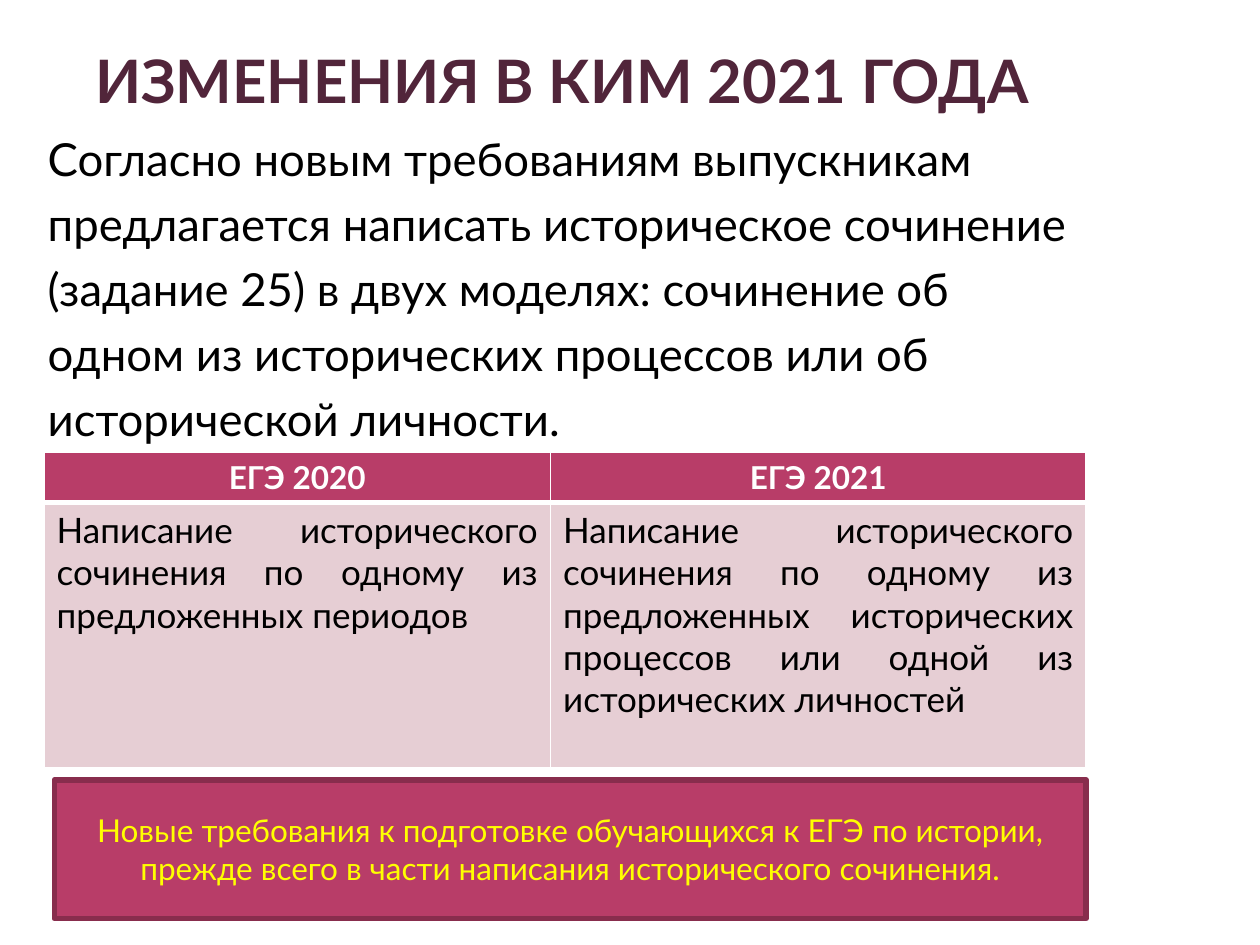
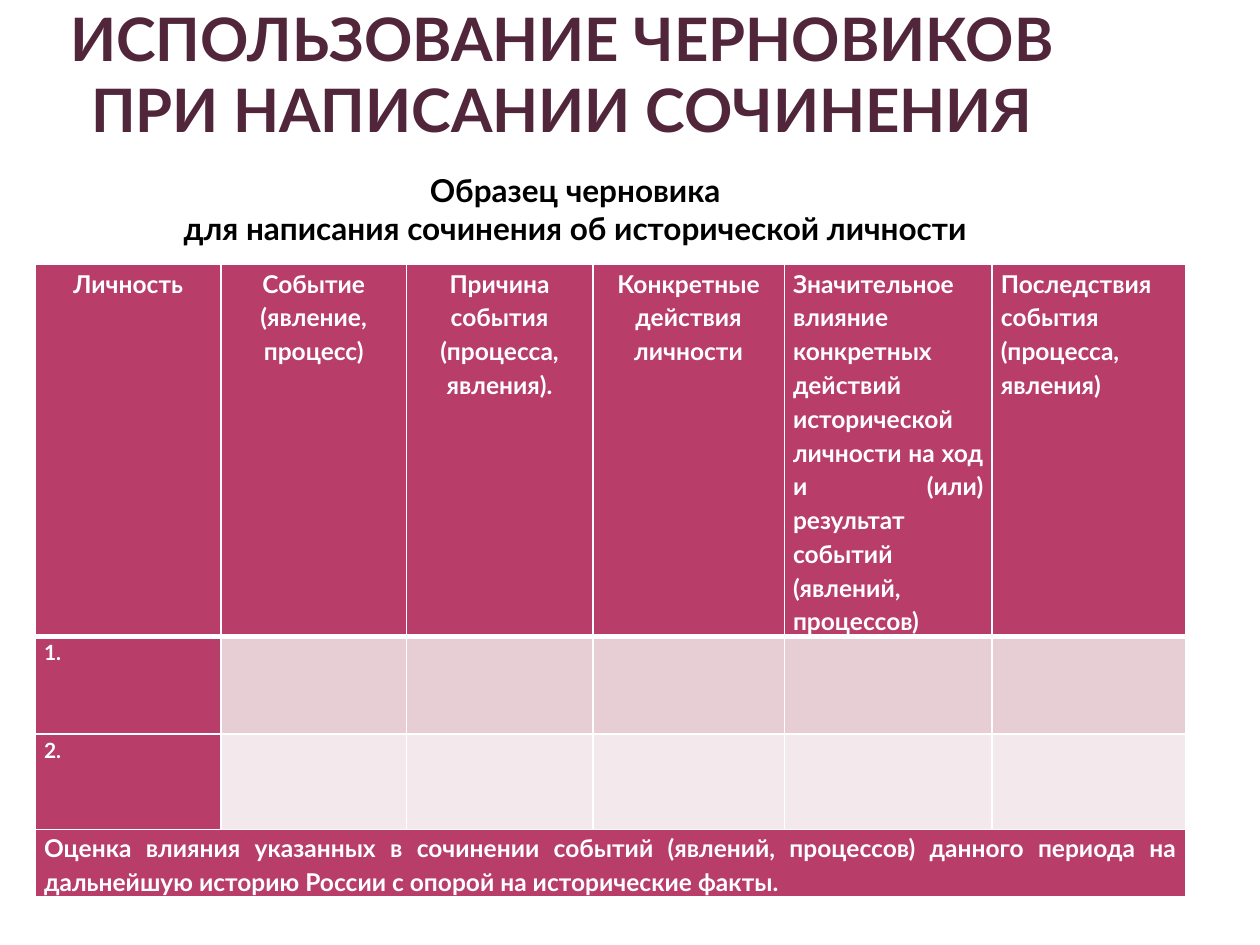
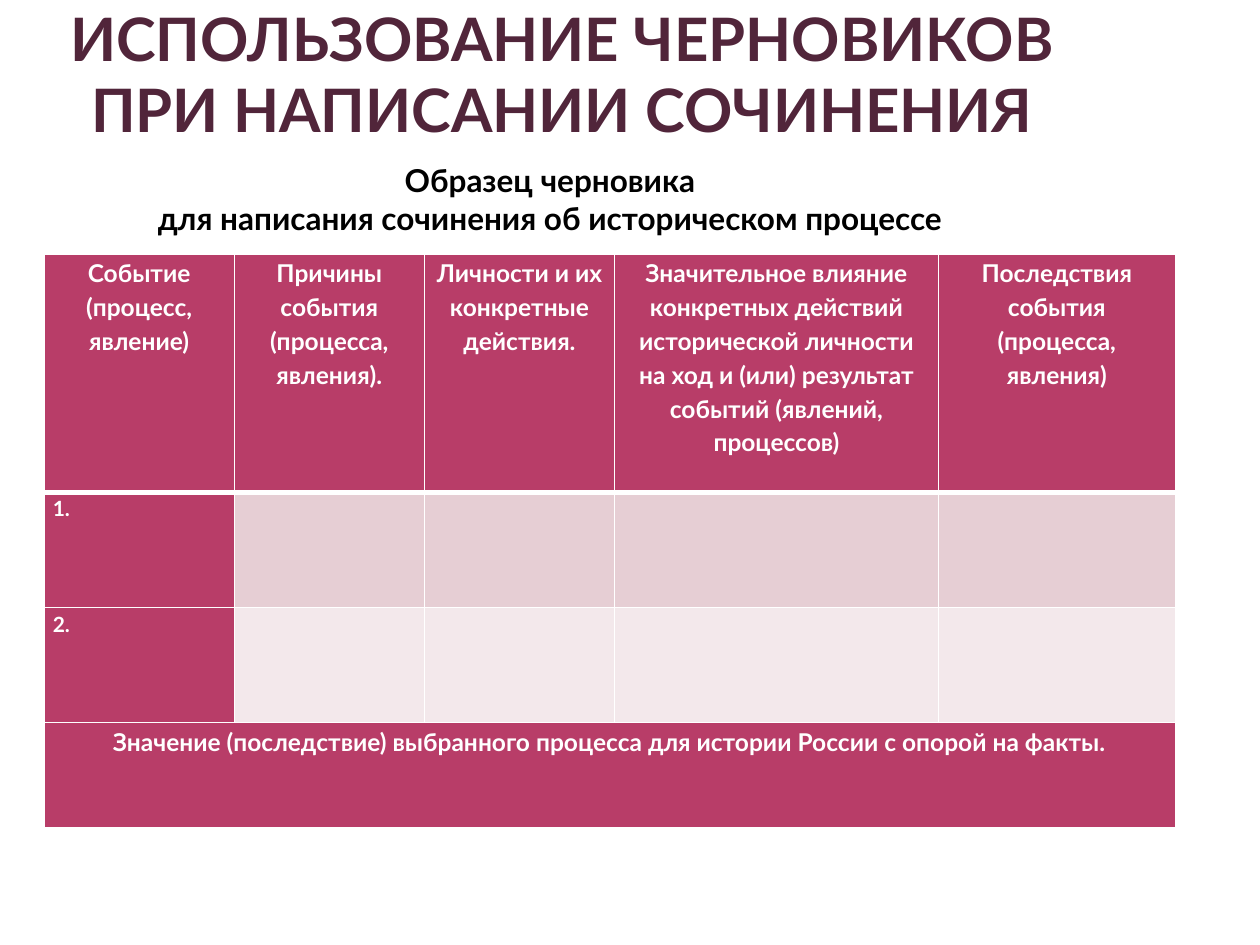
from dataclasses import dataclass
from typing import NamedTuple, Optional

from lxml import etree
from pptx import Presentation
from pptx.dml.color import RGBColor
from pptx.enum.shapes import MSO_SHAPE
from pptx.enum.text import MSO_ANCHOR, MSO_AUTO_SIZE, PP_ALIGN
from pptx.oxml.ns import qn
from pptx.util import Pt

RECTANGLE = MSO_SHAPE.RECTANGLE
MIDDLE, BOTTOM = MSO_ANCHOR.MIDDLE, MSO_ANCHOR.BOTTOM
NO_AUTOFIT = MSO_AUTO_SIZE.NONE
LEFT, CENTER, JUSTIFY = PP_ALIGN.LEFT, PP_ALIGN.CENTER, PP_ALIGN.JUSTIFY

# Shared look
FONT = "Lato"
PLUM, RASPBERRY, DARK_RASPBERRY = "51253A", "B83D68", "882D4D"
ROSE, PALE_ROSE = "E6CED4", "F3E8EB"
WHITE, BLACK, YELLOW = "FFFFFF", "000000", "FFFF00"
TITLE_ONLY = 5
TITLE_SIZE = 34.2
THIN, THICK = 1, 3


class Box(NamedTuple):
    left: float
    top: float
    width: float
    height: float

    def lengths(self) -> list:
        return [Pt(value) for value in self]


class TextStyle(NamedTuple):
    size: float
    color: str
    bold: bool = False
    align: PP_ALIGN = CENTER
    space_before: float = 0
    line_spacing: float = 1.0
    hanging: float = 0


TITLE = TextStyle(TITLE_SIZE, PLUM, bold=True)
TITLE_HIGH = Box(36, 25.2, 570.2, 41)
TITLE_TWO_LINES = Box(36, 9.4, 570.2, 73.4)
BODY = TextStyle(26, BLACK, align=JUSTIFY, space_before=6, hanging=21.6)
SUBTITLE = TextStyle(18, BLACK, bold=True)
CALLOUT = TextStyle(18, YELLOW)
YEAR_HEADER = TextStyle(18, WHITE, bold=True)
YEAR_CELL = TextStyle(20, BLACK, align=JUSTIFY)
DRAFT_HEADER = TextStyle(14, WHITE, bold=True, line_spacing=1.15)
DRAFT_HEADER_WIDE = DRAFT_HEADER._replace(align=JUSTIFY)
DRAFT_NUMBER = DRAFT_HEADER._replace(size=12, align=LEFT)


@dataclass
class DraftSlide:
    subtitle: str
    subtitle_box: Box
    headers: list[str]
    justified_headers: int
    table_left: float
    table_top: float
    column_widths: list[float]
    row_heights: list[float]
    summary: str
    summary_align: PP_ALIGN


DRAFT_TITLE = "ИСПОЛЬЗОВАНИЕ ЧЕРНОВИКОВ ПРИ НАПИСАНИИ СОЧИНЕНИЯ"
INFLUENCE = ("Значительное влияние конкретных действий исторической личности "
             "на ход и (или) результат событий (явлений, процессов)")
CONSEQUENCES = "Последствия события (процесса, явления)"

PERSON_DRAFT = DraftSlide(
    subtitle="Образец черновика\nдля написания сочинения об исторической личности",
    subtitle_box=Box(42.5, 94.3, 572.4, 51.1),
    headers=["Личность", "Событие (явление, процесс)",
             "Причина события (процесса, явления).",
             "Конкретные действия личности", INFLUENCE, CONSEQUENCES],
    justified_headers=2,
    table_left=20.2,
    table_top=151.2,
    column_widths=[106.2, 105.8, 106.6, 109.4, 118.8, 110.8],
    row_heights=[212, 56, 54.4, 38],
    summary="Оценка влияния указанных в сочинении событий (явлений, процессов) "
            "данного периода на дальнейшую историю России с опорой на "
            "исторические факты.",
    summary_align=JUSTIFY,
)
PROCESS_DRAFT = DraftSlide(
    subtitle="Образец черновика\nдля написания сочинения об историческом процессе",
    subtitle_box=Box(25.2, 88.6, 578.2, 51.1),
    headers=["Событие (процесс, явление)",
             "Причины события (процесса, явления).",
             "Личности и их конкретные действия.", INFLUENCE, CONSEQUENCES],
    justified_headers=0,
    table_left=25.2,
    table_top=145.4,
    column_widths=[108.7, 108.7, 108.7, 185, 135.4],
    row_heights=[136, 65.8, 65.8, 59.8],
    summary="Значение (последствие) выбранного процесса для истории России "
            "с опорой на факты.",
    summary_align=CENTER,
)


def rgb(color: str) -> RGBColor:
    return RGBColor.from_string(color)


# Text
def write(text_frame, text: str, style: TextStyle) -> None:
    text_frame.text = text
    text_frame.word_wrap = True
    for index, paragraph in enumerate(text_frame.paragraphs):
        paragraph.alignment = style.align
        paragraph.line_spacing = style.line_spacing
        paragraph.space_before = Pt(style.space_before if index else 0)
        if style.hanging:
            properties = paragraph._p.get_or_add_pPr()
            properties.set("marL", str(Pt(style.hanging)))
            properties.set("indent", str(-Pt(style.hanging)))
        for run in paragraph.runs:
            run.font.name = FONT
            run.font.size = Pt(style.size)
            run.font.bold = style.bold
            run.font.color.rgb = rgb(style.color)


def add_titled_slide(presentation, title: str, box: Box):
    slide = presentation.slides.add_slide(presentation.slide_layouts[TITLE_ONLY])
    shape = slide.shapes.title
    shape.left, shape.top, shape.width, shape.height = box.lengths()
    text_frame = shape.text_frame
    write(text_frame, title, TITLE)
    text_frame.auto_size = NO_AUTOFIT
    text_frame.vertical_anchor = BOTTOM
    text_frame.margin_left = text_frame.margin_right = Pt(3.6)
    text_frame.margin_top = text_frame.margin_bottom = 0
    return slide


def add_text(slide, box: Box, text: str, style: TextStyle) -> None:
    write(slide.shapes.add_textbox(*box.lengths()).text_frame, text, style)


def add_callout(slide, box: Box, text: str) -> None:
    shape = slide.shapes.add_shape(RECTANGLE, *box.lengths())
    shape.shadow.inherit = False
    shape.fill.solid()
    shape.fill.fore_color.rgb = rgb(RASPBERRY)
    shape.line.color.rgb = rgb(DARK_RASPBERRY)
    shape.line.width = Pt(3.15)
    write(shape.text_frame, text, CALLOUT)
    shape.text_frame.vertical_anchor = MIDDLE


# Tables
def add_border(cell, side: str, width: float) -> None:
    line = etree.SubElement(cell._tc.get_or_add_tcPr(), qn(f"a:ln{side}"),
                            w=str(Pt(width)))
    fill = etree.SubElement(line, qn("a:solidFill"))
    etree.SubElement(fill, qn("a:srgbClr"), val=WHITE)


def add_grid(slide, left: float, top: float, column_widths: list[float],
             row_heights: list[float]):
    box = Box(left, top, sum(column_widths), sum(row_heights))
    table = slide.shapes.add_table(len(row_heights), len(column_widths),
                                   *box.lengths()).table
    table.horz_banding = False
    for column, width in zip(table.columns, column_widths):
        column.width = Pt(width)
    for index, (row, height) in enumerate(zip(table.rows, row_heights)):
        row.height = Pt(height)
        for cell in row.cells:
            add_border(cell, "L", THIN)
            add_border(cell, "R", THIN)
            add_border(cell, "T", THICK if index == 1 else THIN)
            add_border(cell, "B", THICK if index == 0 else THIN)
    return table


def fill_cell(cell, color: str, text: str = "",
              style: Optional[TextStyle] = None) -> None:
    cell.fill.solid()
    cell.fill.fore_color.rgb = rgb(color)
    if style:
        write(cell.text_frame, text, style)


def add_draft_table(slide, draft: DraftSlide) -> None:
    table = add_grid(slide, draft.table_left, draft.table_top,
                     draft.column_widths, draft.row_heights)
    last_row, column_count = len(draft.row_heights) - 1, len(draft.headers)
    for row in table.rows:
        for cell in row.cells:
            cell.margin_left = cell.margin_right = Pt(5)
            cell.margin_top = cell.margin_bottom = 0

    first_justified = column_count - draft.justified_headers
    for column, header in enumerate(draft.headers):
        style = DRAFT_HEADER if column < first_justified else DRAFT_HEADER_WIDE
        fill_cell(table.cell(0, column), RASPBERRY, header, style)
    for row, color in enumerate((ROSE, PALE_ROSE), start=1):
        fill_cell(table.cell(row, 0), RASPBERRY, f"{row}.", DRAFT_NUMBER)
        for column in range(1, column_count):
            fill_cell(table.cell(row, column), color)

    summary = table.cell(last_row, 0)
    summary.merge(table.cell(last_row, column_count - 1))
    fill_cell(summary, RASPBERRY, draft.summary,
              DRAFT_HEADER._replace(align=draft.summary_align))


# Slides
def add_changes_slide(presentation) -> None:
    slide = add_titled_slide(presentation, "ИЗМЕНЕНИЯ В КИМ 2021 ГОДА", TITLE_HIGH)
    add_text(slide, Box(20.2, 71.3, 607, 437), "\n".join([
        "Согласно новым требованиям выпускникам",
        "предлагается написать историческое сочинение",
        "(задание 25) в двух моделях: сочинение об",
        "одном из исторических процессов или об",
        "исторической личности.",
    ]), BODY)
    years = {
        "ЕГЭ 2020": "Написание исторического сочинения по одному из "
                    "предложенных периодов",
        "ЕГЭ 2021": "Написание исторического сочинения по одному из "
                    "предложенных исторических процессов или одной из "
                    "исторических личностей",
    }
    table = add_grid(slide, 25.2, 258.5, [289.4, 306], [28.8, 151.2])
    for column, (year, requirement) in enumerate(years.items()):
        fill_cell(table.cell(0, column), RASPBERRY, year, YEAR_HEADER)
        fill_cell(table.cell(1, column), ROSE, requirement, YEAR_CELL)
    add_callout(slide, Box(31, 445.7, 589.7, 79.2),
                "Новые требования к подготовке обучающихся к ЕГЭ по истории, "
                "прежде всего в части написания исторического сочинения.")


def add_draft_slide(presentation, draft: DraftSlide) -> None:
    slide = add_titled_slide(presentation, DRAFT_TITLE, TITLE_TWO_LINES)
    add_draft_table(slide, draft)
    add_text(slide, draft.subtitle_box, draft.subtitle, SUBTITLE)


def main() -> None:
    presentation = Presentation()
    presentation.slide_width, presentation.slide_height = Pt(720), Pt(540)
    add_changes_slide(presentation)
    for draft in (PERSON_DRAFT, PROCESS_DRAFT):
        add_draft_slide(presentation, draft)
    presentation.save("out.pptx")


if __name__ == "__main__":
    main()
